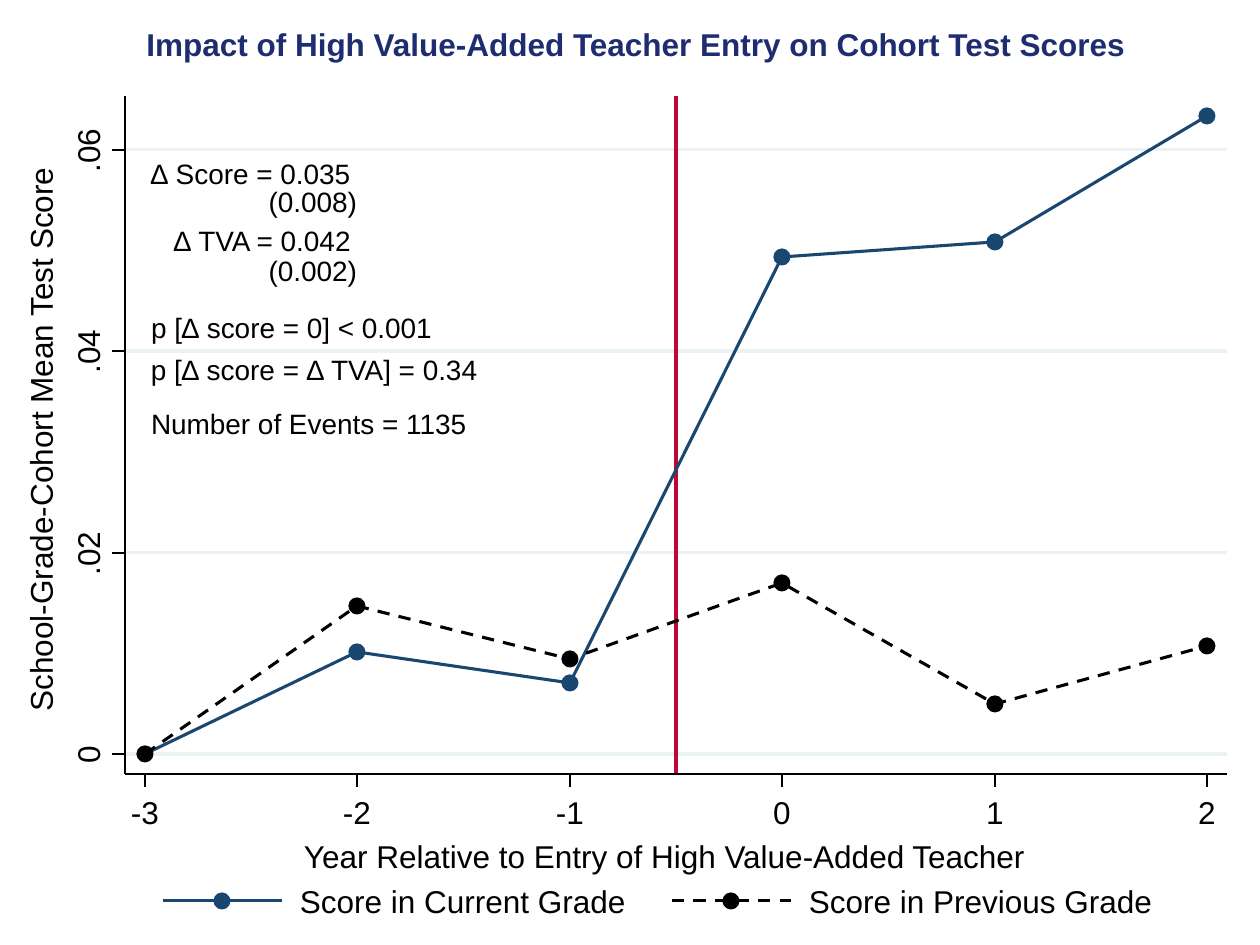
from lxml import etree
from pptx import Presentation
from pptx import util as u
from pptx.dml.color import RGBColor
from pptx.enum import dml, shapes, text
from pptx.oxml.ns import qn

PX = 914400 // 126
NAVY, BLACK, GRID, RED = "1A476F", "000000", "EAF2F3", "C10534"
LEFT, CENTER, RIGHT = text.PP_ALIGN.LEFT, text.PP_ALIGN.CENTER, text.PP_ALIGN.RIGHT
rgb = RGBColor.from_string

deck = Presentation()
deck.slide_width, deck.slide_height = u.Inches(10), u.Inches(7.5)
slide = deck.slides.add_slide(deck.slide_layouts[5])
items = slide.shapes


def rule(x1, y1, x2, y2, color, width=1.75, dash=None):
    line = items.add_connector(shapes.MSO_CONNECTOR.STRAIGHT,
                               x1 * PX, y1 * PX, x2 * PX, y2 * PX)
    line.line.color.rgb = rgb(color)
    line.line.width = u.Pt(width)
    line.line.dash_style = dash
    etree.SubElement(line._element.spPr, qn("a:effectLst"))


def label(words, x, y, w, h=45, align=LEFT, size=18, turn=0, color=BLACK, box=None):
    box = box or items.add_textbox(0, 0, 0, 0)
    box.left, box.top, box.width, box.height = x * PX, y * PX, w * PX, h * PX
    box.rotation = turn
    frame = box.text_frame
    frame.margin_left = frame.margin_right = frame.margin_top = frame.margin_bottom = 0
    frame.vertical_anchor = text.MSO_ANCHOR.TOP
    frame.word_wrap = align != LEFT
    frame.auto_size = text.MSO_AUTO_SIZE.SHAPE_TO_FIT_TEXT
    frame.text = words
    para = frame.paragraphs[0]
    para.alignment = align
    para.font.name, para.font.size = "Arial", u.Pt(size)
    para.font.bold = box.is_placeholder
    para.font.color.rgb = rgb(color)


# Title
label("Impact of High Value-Added Teacher Entry on Cohort Test Scores",
      136, 25, 1000, 38, CENTER, color="1E2D70", box=items.title)

# Plot area and its scales
west, east, north, south = 125, 1227, 96, 774
years = range(-3, 3)
cols = [round(145 + 212.4 * i) for i in range(len(years))]
ticks = {"0": 0, ".02": 0.02, ".04": 0.04, ".06": 0.06}
base, unit = 754, 10065
rows = {name: round(base - score * unit) for name, score in ticks.items()}

# Grid and entry marker
for y in rows.values():
    rule(west, y, east, y, GRID)
entry = (cols[2] + cols[3]) // 2
rule(entry, south, entry, north, RED)

# Series with markers and legend keys
series = [
    ("Score in Current Grade", NAVY, None, 163, 329, 1,
     [0, 0.0101, 0.0071, 0.0494, 0.0509, 0.0634]),
    ("Score in Previous Grade", BLACK, dml.MSO_LINE.DASH, 672, 347, 0,
     [0, 0.0147, 0.0094, 0.017, 0.005, 0.0107]),
]
for name, color, dash, key, wide, first, scores in series:
    points = [(x, round(base - score * unit)) for x, score in zip(cols, scores)]
    path = items.build_freeform(*points[0], scale=PX)
    path.add_line_segments(points[1:], close=False)
    curve = path.convert_to_shape()
    curve.shadow.inherit = False
    curve.fill.background()
    curve.line.color.rgb = rgb(color)
    curve.line.width = u.Pt(1.75)
    curve.line.dash_style = dash

    rule(key, 901, key + 119, 901, color, dash=dash)
    label(name, key + 137, 882, wide, 38)
    for x, y in points[first:] + [(key + 59, 901)]:
        dot = items.add_shape(shapes.MSO_SHAPE.OVAL,
                              (x - 7) * PX, (y - 7) * PX, 14 * PX, 14 * PX)
        dot.shadow.inherit = False
        dot.fill.solid()
        dot.fill.fore_color.rgb = dot.line.color.rgb = rgb(color)
        dot.line.width = u.Pt(1.75)

# Vertical axis
rule(west, south, west, north, BLACK, 0.88)
for name, y in rows.items():
    rule(west, y, west - 13, y, BLACK, 0.88)
    label(name, 61, y - 22, 60, align=CENTER, turn=270)
label("School-Grade-Cohort Mean Test Score", -253, 417, 594, align=CENTER, turn=270)

# Horizontal axis
rule(west, south, east, south, BLACK, 0.88)
for year, x in zip(years, cols):
    rule(x, south, x, south + 13, BLACK, 0.88)
    label(str(year), x - 22, 793, 44, align=CENTER)
label("Year Relative to Entry of High Value-Added Teacher", 272, 837, 785, align=CENTER)

# Estimates
notes = [
    ("∆ Score = 0.035", 151, 157, 202, LEFT),
    ("(0.008)", 145, 185, 212, RIGHT),
    ("∆ TVA = 0.042", 174, 224, 179, LEFT),
    ("(0.002)", 168, 254, 189, RIGHT),
    ("p [∆ score = 0] < 0.001", 151, 311, 285, LEFT),
    ("p [∆ score = ∆ TVA] = 0.34", 151, 353, 331, LEFT),
    ("Number of Events = 1135", 151, 407, 320, LEFT),
]
for words, x, y, w, align in notes:
    label(words, x, y, w, 34, align, size=16)

deck.save("out.pptx")
